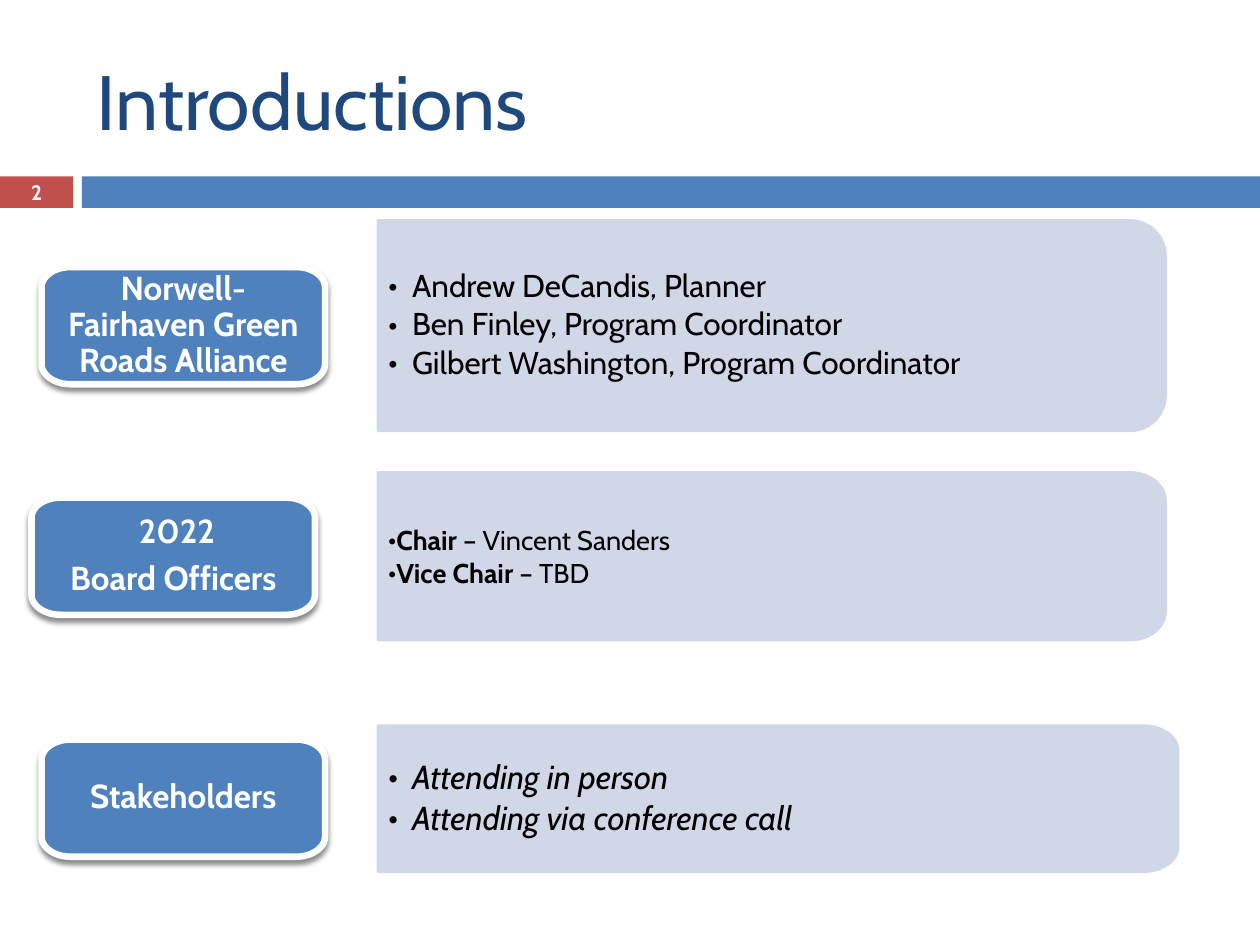
import math

from lxml import etree
from pptx import Presentation
from pptx.dml.color import RGBColor
from pptx.enum.shapes import MSO_SHAPE
from pptx.enum.text import MSO_ANCHOR, PP_ALIGN
from pptx.oxml.ns import qn
from pptx.util import Inches, Pt

RECTANGLE = MSO_SHAPE.RECTANGLE
MIDDLE = MSO_ANCHOR.MIDDLE
LEFT, CENTER = PP_ALIGN.LEFT, PP_ALIGN.CENTER
FONT = "Cabin"
COLORS = {
    "red": "C0504D",
    "blue": "4F81BD",
    "navy": "1F497D",
    "panel": "D0D8E8",
    "white": "FFFFFF",
    "black": "000000",
}

deck = Presentation()
deck.slide_width, deck.slide_height = Inches(10), Inches(7.5)
page = deck.slides.add_slide(deck.slide_layouts[6])


def rounded_shape(left, top, width, height, radii, left_round, fill, line, line_width):
    """Draw a box with elliptical corners; the left ones are square unless left_round."""
    rx, ry = radii
    right, bottom = left + width, top + height
    # Corner centres, clockwise from top right, with the angle where each arc starts
    corners = [(right - rx, top + ry, -90), (right - rx, bottom - ry, 0)]
    if left_round:
        corners += [(left + rx, bottom - ry, 90), (left + rx, top + ry, 180)]
    points = []
    for x, y, start in corners:
        for step in range(13):
            angle = math.radians(start + step * 7.5)
            points.append((x + rx * math.cos(angle), y + ry * math.sin(angle)))
    if not left_round:
        points += [(left, bottom), (left, top)]
    points = [(Inches(x), Inches(y)) for x, y in points]
    builder = page.shapes.build_freeform(*points[0], scale=1.0)
    builder.add_line_segments(points[1:], close=True)
    shape = builder.convert_to_shape()
    shape.shadow.inherit = False
    shape.fill.solid()
    shape.fill.fore_color.rgb = RGBColor.from_string(COLORS[fill])
    shape.line.color.rgb = RGBColor.from_string(COLORS[line])
    shape.line.width = Pt(line_width)
    return shape


def write(box, paragraphs, size, color, align=LEFT, insets=(0.1, 0.05, 0.1, 0.05),
          line_spacing=1.0, space_after=0, bullet_indent=None):
    """Fill box with paragraphs, each a list of (text, bold, italic) runs."""
    frame = box.text_frame
    frame.word_wrap = True
    frame.vertical_anchor = MIDDLE
    (frame.margin_left, frame.margin_top,
     frame.margin_right, frame.margin_bottom) = [Inches(inset) for inset in insets]
    for index, runs in enumerate(paragraphs):
        para = frame.add_paragraph() if index else frame.paragraphs[0]
        para.alignment = align
        para.line_spacing = line_spacing
        para.space_after = Pt(space_after)
        if bullet_indent is not None:
            props = para._p.get_or_add_pPr()
            props.set("marL", str(Inches(bullet_indent)))
            props.set("indent", str(-Inches(bullet_indent)))
            etree.SubElement(props, qn("a:buFont"), typeface=FONT)
            etree.SubElement(props, qn("a:buChar"), char="•")
        for text, bold, italic in runs:
            span = para.add_run()
            span.text = text
            span.font.name = FONT
            span.font.size = Pt(size)
            span.font.bold = bold
            span.font.italic = italic
            span.font.color.rgb = RGBColor.from_string(COLORS[color])


# Header: title, colour bars and page number
for left, width, color in [(0, 0.58, "red"), (0.65, 9.35, "blue")]:
    bar = page.shapes.add_shape(RECTANGLE, Inches(left), Inches(1.4), Inches(width), Inches(0.25))
    bar.shadow.inherit = False
    bar.fill.solid()
    bar.fill.fore_color.rgb = RGBColor.from_string(COLORS[color])
    bar.line.fill.background()

title = page.shapes.add_textbox(Inches(0.67), Inches(0.25), Inches(8.92), Inches(1.08))
write(title, [[("Introductions", False, False)]], 44, "navy")
number = page.shapes.add_textbox(Inches(0), Inches(1.39), Inches(0.58), Inches(0.27))
write(number, [[("2", True, False)]], 11.9, "white", CENTER, insets=(0, 0, 0, 0))

# Each row: a detail panel and the tag that names it
rows = [
    {
        "panel": (1.75, 6.25, 1.67), "tag": (0.33, 2.12),
        "names": ["Norwell-Fairhaven Green Roads Alliance"],
        "details": [
            [("Andrew DeCandis, Planner", False, False)],
            [("Ben Finley, Program Coordinator", False, False)],
            [("Gilbert Washington, Program Coordinator", False, False)],
        ],
        "size": 18, "line_spacing": 0.9, "space_after": 2.7, "indent": 0.19,
    },
    {
        "panel": (3.75, 6.25, 1.33), "tag": (0.25, 3.95),
        "names": [" 2022", "Board Officers"],
        "details": [
            [("Chair", True, False), (" – Vincent Sanders", False, False)],
            [("Vice Chair ", True, False), ("– TBD", False, False)],
        ],
        "size": 15.5, "line_spacing": 1.0, "space_after": 0, "indent": 0,
    },
    {
        "panel": (5.76, 6.35, 1.16), "tag": (0.33, 5.87),
        "names": ["Stakeholders"],
        "details": [
            [("Attending in person", False, True)],
            [("Attending via conference call", False, True)],
        ],
        "size": 19, "line_spacing": 0.9, "space_after": 2.85, "indent": 0.19,
    },
]

for row in rows:
    top, width, height = row["panel"]
    panel = rounded_shape(3, top, width, height, (0.28, height / 6), False, "panel", "panel", 1.5)
    write(panel, row["details"], row["size"], "black", insets=(0.08, 0.1, 0.14, 0.1),
          line_spacing=row["line_spacing"], space_after=row["space_after"],
          bullet_indent=row["indent"])

    left, top = row["tag"]
    tag = rounded_shape(left, top, 2.25, 0.93, (0.23, 0.16), True, "blue", "white", 3.75)
    effects = tag._element.spPr.find(qn("a:effectLst"))
    shadow = etree.SubElement(effects, qn("a:outerShdw"), blurRad=str(Pt(3)),
                              dist=str(Pt(2.4)), dir="5400000", rotWithShape="0")
    shade = etree.SubElement(shadow, qn("a:srgbClr"), val=COLORS["black"])
    etree.SubElement(shade, qn("a:alpha"), val="45000")
    write(tag, [[(name, True, False)] for name in row["names"]], 19, "white", CENTER,
          insets=(0.15, 0.11, 0.15, 0.11), line_spacing=0.9, space_after=6.65)

deck.save("out.pptx")
